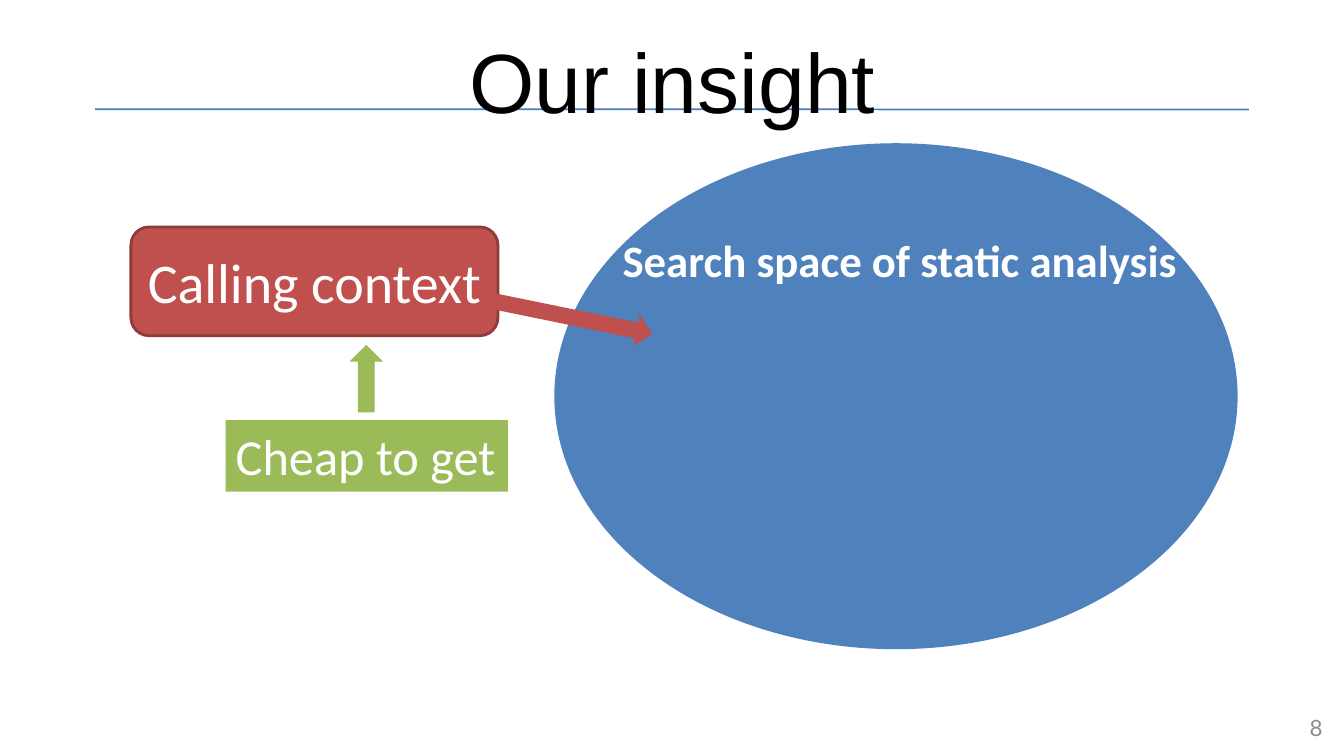
from lxml import etree
from pptx import Presentation
from pptx import util as u
from pptx.dml.color import RGBColor
from pptx.enum import shapes, text
from pptx.oxml.ns import qn

HUES = {
    "black": "000000", "white": "FFFFFF", "grey": "8C8C8C",
    "blue": "4F81BD", "rule": "4B7EBC", "red": "C0504D",
    "edge": "8E3B39", "green": "9BBB59",
}
KIND = shapes.MSO_SHAPE
LEFT, MID, RIGHT = text.PP_ALIGN.LEFT, text.PP_ALIGN.CENTER, text.PP_ALIGN.RIGHT
TOP, HALF = text.MSO_ANCHOR.TOP, text.MSO_ANCHOR.MIDDLE


def hue(name):
    return RGBColor.from_string(HUES[name])


def write(shape, words, size, face, tint, align, anchor, wrap=True, bold=False):
    frame = shape.text_frame
    frame.word_wrap = wrap
    frame.vertical_anchor = anchor
    if not wrap:
        frame.auto_size = text.MSO_AUTO_SIZE.SHAPE_TO_FIT_TEXT
    para = frame.paragraphs[0]
    para.alignment = align
    run = para.add_run()
    run.text = words
    form = {"size": u.Pt(size), "name": face, "bold": bold}
    for key, value in form.items():
        setattr(run.font, key, value)
    run.font.color.rgb = hue(tint)


deck = Presentation()
deck.slide_width, deck.slide_height = u.Cm(33.87), u.Cm(19.05)
slide = deck.slides.add_slide(deck.slide_layouts[6])
tree = slide.shapes

rule = tree.add_connector(shapes.MSO_CONNECTOR.STRAIGHT,
                          u.Cm(2.4), u.Cm(2.75), u.Cm(31.47), u.Cm(2.76))
rule.line.color.rgb = hue("rule")
rule.line.width = u.Pt(1.25)
etree.SubElement(rule._element.spPr, qn("a:effectLst"))

title = tree.add_textbox(u.Cm(1.7), u.Cm(0.43), u.Cm(30.48), u.Cm(3.18))
write(title, "Our insight", 60, "Arial", "black", MID, HALF)
page = tree.add_textbox(u.Cm(25.68), u.Cm(17.83), u.Cm(7.9), u.Cm(1.02))
write(page, "8", 16, "Lato", "grey", RIGHT, HALF)

parts = {}
for name, kind, spot, fill, turn in [
    ("space", KIND.OVAL, (13.97, 3.61, 17.22, 12.75), "blue", 0),
    ("call", KIND.ROUNDED_RECTANGLE, (3.3, 5.72, 9.25, 2.74), "red", 0),
    ("cheap", KIND.RECTANGLE, (5.69, 10.59, 7.11, 1.8), "green", 0),
    ("up", KIND.DOWN_ARROW, (8.81, 8.69, 0.84, 1.7), "green", 180),
    ("into", KIND.RIGHT_ARROW, (12.34, 7.59, 4.14, 0.81), "red", 11.6),
]:
    part = tree.add_shape(kind, *map(u.Cm, spot))
    part.shadow.inherit = False
    part.fill.solid()
    part.fill.fore_color.rgb = hue(fill)
    part.line.fill.background()
    part.rotation = turn
    parts[name] = part

call = parts["call"]
call.line.color.rgb = hue("edge")
call.line.width = u.Pt(2)
write(call, "Calling context", 40, "Calibri", "white", MID, HALF)
write(parts["cheap"], "Cheap to get", 36, "Calibri", "white", LEFT, TOP, False)

label = tree.add_textbox(u.Cm(15.44), u.Cm(5.74), u.Cm(14.6), u.Cm(1.63))
write(label, "Search space of static analysis", 32, "Calibri", "white",
      LEFT, TOP, False, True)

deck.save("out.pptx")
